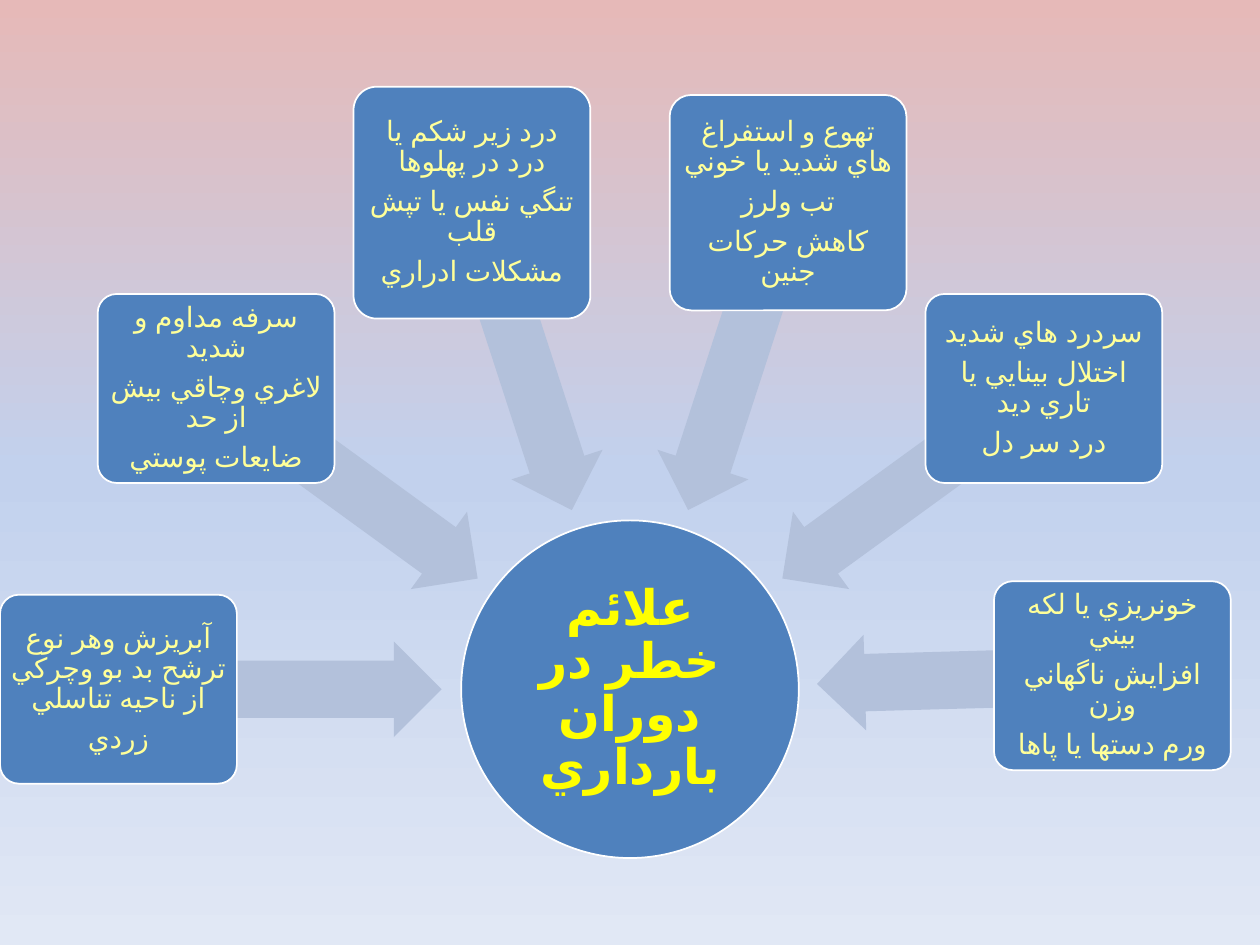
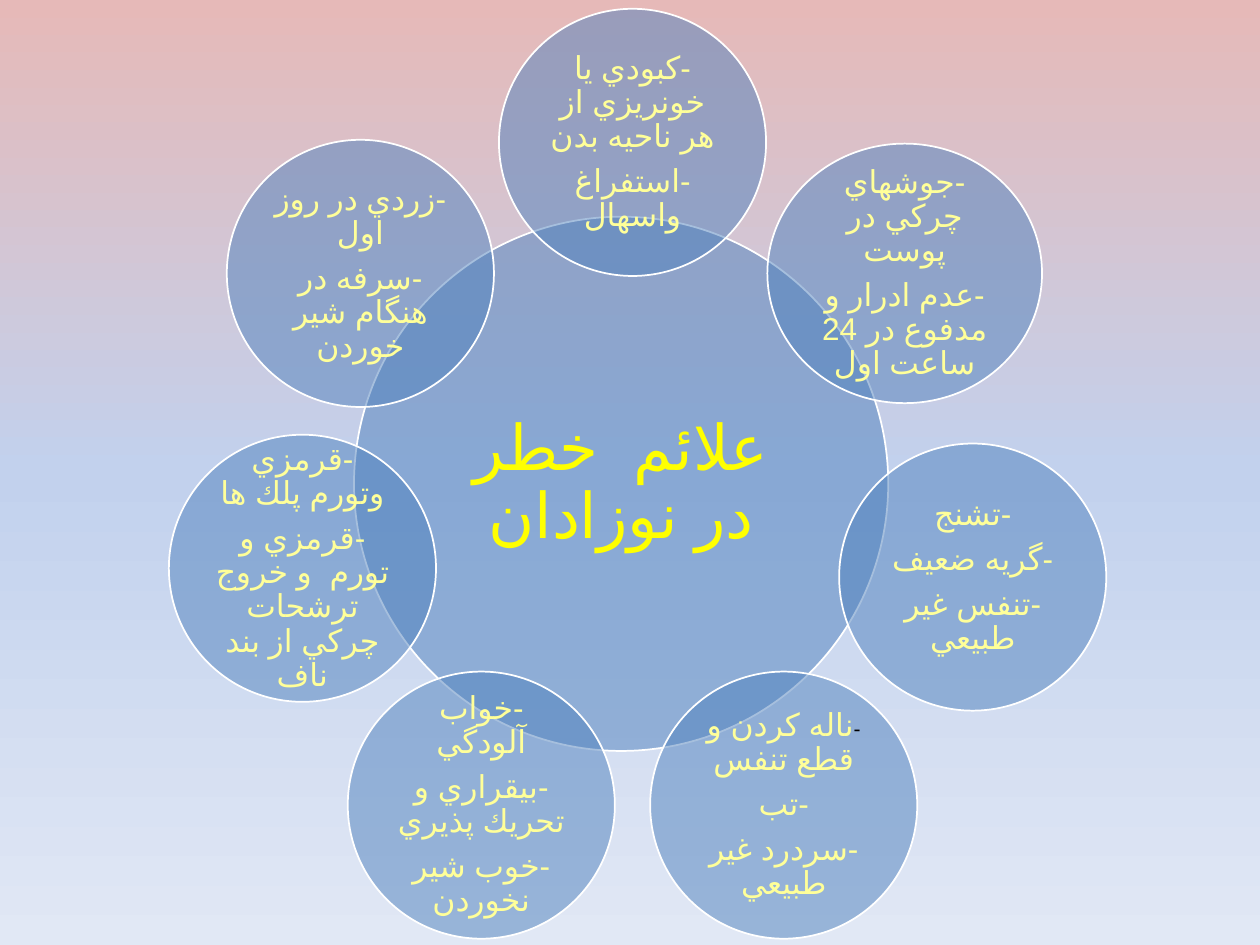
from copy import deepcopy
from math import cos, radians, sin

from lxml import etree
from pptx import Presentation
from pptx.dml.color import RGBColor
from pptx.enum.lang import MSO_LANGUAGE_ID
from pptx.enum.shapes import MSO_SHAPE
from pptx.enum.text import MSO_ANCHOR, PP_ALIGN
from pptx.oxml.ns import qn
from pptx.util import Inches, Pt

ELLIPSE = MSO_SHAPE.OVAL
ROUNDED = MSO_SHAPE.ROUNDED_RECTANGLE
LEFT_ARROW = MSO_SHAPE.LEFT_ARROW
MIDDLE = MSO_ANCHOR.MIDDLE
CENTER = PP_ALIGN.CENTER
PERSIAN = MSO_LANGUAGE_ID.FARSI

FONT = "Calibri"
COMPLEX_SCRIPT_FONT = "Arial"
COLORS = {
    "blue": "4F81BD",
    "arrow": "B3C1DB",
    "outline": "FFFFFF",
    "title": "FFFF00",
    "body": "FFFF99",
    "dash": "000000",
}
BACKGROUND_STOPS = [(0, "E6B9B8"), (0.5, "C2D1ED"), (1, "E1E8F5")]

# Slide 1: every box and arrow lies on a ray from the hub
HUB = (5, 5.47)
BOX_WIDTH = 1.88
# angle, box distance, box height, arrow distance, arrow length, lines
PREGNANCY_SIGNS = [
    (180, 4.06, 1.5, 2.78, 2.57,
     ["آبريزش وهر نوع ترشح بد بو وچركي از ناحيه تناسلي", "زردي"]),
    (216, 4.06, 1.5, 2.78, 2.57,
     ["سرفه مداوم و شديد", "لاغري وچاقي بيش از حد", "ضايعات پوستي"]),
    (252, 4.06, 1.84, 2.78, 2.57,
     ["درد زير شكم يا درد در پهلوها", "تنگي نفس يا تپش قلب", "مشكلات ادراري"]),
    (288, 4.06, 1.71, 2.78, 2.57,
     ["تهوع و استفراغ هاي شديد يا خوني", "تب ولرز", "كاهش حركات جنين"]),
    (324, 4.06, 1.5, 2.78, 2.57,
     ["سردرد هاي شديد", "اختلال بينايي يا تاري ديد", "درد سر دل"]),
    (358.4, 3.83, 1.5, 2.66, 2.35,
     ["خونريزي يا لكه بيني", "افزايش ناگهاني وزن", "ورم دستها يا پاها"]),
]

# Slide 2: centre, size, lines
PETAL = (2.12, 2.12)
NEWBORN_SIGNS = [
    ((5.02, 1.13), PETAL, ["-كبودي يا خونريزي از هر ناحيه بدن", "-استفراغ واسهال"]),
    ((7.18, 2.17), (2.18, 2.06),
     ["-جوشهاي چركي در پوست", "-عدم ادرار و مدفوع در 24 ساعت اول"]),
    ((7.72, 4.58), PETAL, ["-تشنج", "-گريه ضعيف", "-تنفس غير طبيعي"]),
    ((6.22, 6.39), PETAL, ["ناله كردن و قطع تنفس", "-تب", "-سردرد غير طبيعي"]),
    ((3.82, 6.39), PETAL,
     ["-خواب آلودگي", "-بيقراري و تحريك پذيري", "-خوب شير نخوردن"]),
    ((2.4, 4.51), PETAL,
     ["-قرمزي وتورم پلك ها", "-قرمزي و تورم  و خروج ترشحات چركي از بند ناف"]),
    ((2.86, 2.17), PETAL, ["-زردي در روز اول", "-سرفه در هنگام شير خوردن"]),
]
SMALL_DASH_PETAL = 3


def color(name):
    return RGBColor.from_string(COLORS[name])


def set_background(master):
    """Give all slides the vertical three-stop gradient."""
    fill = master.background.fill
    fill.gradient()
    fill.gradient_angle = 270
    stop_list = master._element.find(".//" + qn("a:gsLst"))
    stop_list.append(deepcopy(stop_list[0]))
    for stop, (position, value) in zip(fill.gradient_stops, BACKGROUND_STOPS):
        stop.position = position
        stop.color.rgb = RGBColor.from_string(value)


def polar_point(distance, angle):
    return (HUB[0] + distance * cos(radians(angle)),
            HUB[1] + distance * sin(radians(angle)))


def add_centered_shape(slide, kind, center, size, fill, opacity=100):
    """Add a white-outlined shape around its centre point."""
    (x, y), (width, height) = center, size
    shape = slide.shapes.add_shape(kind, Inches(x - width / 2), Inches(y - height / 2),
                                   Inches(width), Inches(height))
    shape.shadow.inherit = False
    shape.fill.solid()
    shape.fill.fore_color.rgb = color(fill)
    if opacity < 100:
        fill_color = shape._element.spPr.find(qn("a:solidFill"))[0]
        etree.SubElement(fill_color, qn("a:alpha"), val=str(opacity * 1000))
    shape.line.color.rgb = color("outline")
    shape.line.width = Pt(1)
    return shape


def add_arrow(slide, angle, distance, length):
    arrow = add_centered_shape(slide, LEFT_ARROW, polar_point(distance, angle),
                               (length, 0.76), "arrow")
    arrow.adjustments[0] = 0.6
    arrow.adjustments[1] = 0.5
    arrow.rotation = angle
    arrow.line.fill.background()


def add_box(slide, angle, distance, height, lines):
    box = add_centered_shape(slide, ROUNDED, polar_point(distance, angle),
                             (BOX_WIDTH, height), "blue")
    box.adjustments[0] = 0.1
    write_lines(box, lines, 16)


def write_lines(shape, lines, size, color_name="body", bold=False, inset=0.03):
    """Fill the shape with centred right-to-left paragraphs."""
    frame = shape.text_frame
    frame.word_wrap = True
    frame.vertical_anchor = MIDDLE
    frame.margin_left = frame.margin_right = Inches(inset)
    frame.margin_top = frame.margin_bottom = Inches(inset)
    frame.text = "\n".join(lines)
    for paragraph in frame.paragraphs:
        paragraph.alignment = CENTER
        paragraph.line_spacing = 0.9
        properties = paragraph._p.get_or_add_pPr()
        properties.set("rtl", "1")
        space_after = etree.SubElement(properties, qn("a:spcAft"))
        etree.SubElement(space_after, qn("a:spcPct"), val="35000")
        format_run(paragraph.runs[0], size, color_name, bold)


def format_run(run, size, color_name, bold):
    font = run.font
    font.name = FONT
    font.size = Pt(size)
    font.bold = bold
    font.language_id = PERSIAN
    font.color.rgb = color(color_name)
    etree.SubElement(run._r.get_or_add_rPr(), qn("a:cs"), typeface=COMPLEX_SCRIPT_FONT)


def add_small_dash(paragraph):
    """Put a small black dash before the first run."""
    first = paragraph.runs[0]._r
    first.addprevious(deepcopy(first))
    dash = paragraph.runs[0]
    dash.text = "-"
    dash.font.size = Pt(12)
    dash.font.color.rgb = color("dash")


def build_pregnancy_slide(slide):
    hub = add_centered_shape(slide, ELLIPSE, HUB, (2.68, 2.68), "blue")
    write_lines(hub, ["علائم خطر در دوران بارداري"], 28, "title", bold=True, inset=0.02)
    for angle, box_distance, height, arrow_distance, length, lines in PREGNANCY_SIGNS:
        add_arrow(slide, angle, arrow_distance, length)
        add_box(slide, angle, box_distance, height, lines)


def build_newborn_slide(slide):
    core = add_centered_shape(slide, ELLIPSE, (4.93, 3.84), (4.24, 4.24), "blue", 50)
    write_lines(core, ["علائم  خطر در نوزادان"], 36, "title", inset=0.05)
    for index, (center, size, lines) in enumerate(NEWBORN_SIGNS):
        petal = add_centered_shape(slide, ELLIPSE, center, size, "blue", 50)
        write_lines(petal, lines, 18)
        if index == SMALL_DASH_PETAL:
            add_small_dash(petal.text_frame.paragraphs[0])


def main():
    presentation = Presentation()
    presentation.slide_width = Inches(10)
    presentation.slide_height = Inches(7.5)
    set_background(presentation.slide_master)
    blank = presentation.slide_layouts[6]
    for build in (build_pregnancy_slide, build_newborn_slide):
        build(presentation.slides.add_slide(blank))
    presentation.save("out.pptx")


if __name__ == "__main__":
    main()
